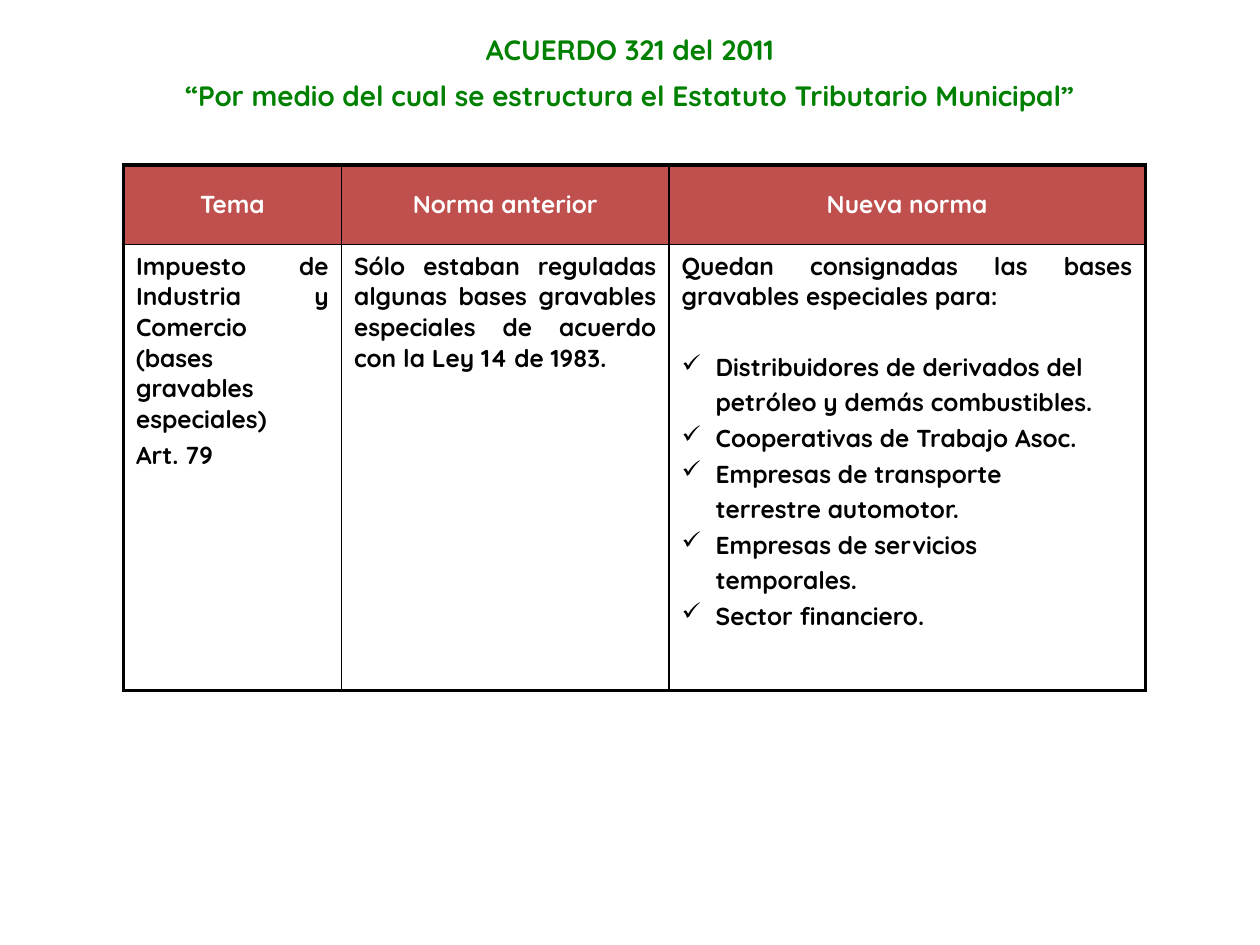
from lxml import etree
from pptx import Presentation
from pptx import util as u
from pptx.dml import color
from pptx.enum import text
from pptx.oxml import ns

FONT = "Quicksand"
COLORS = {"title": "008000", "header": "C0504D", "light": "FFFFFF", "dark": "000000"}
CENTER = text.PP_ALIGN.CENTER
LEFT = text.PP_ALIGN.LEFT
JUSTIFY = text.PP_ALIGN.JUSTIFY

TITLE = [
    "ACUERDO 321 del 2011",
    "“Por medio del cual se estructura el Estatuto Tributario Municipal”",
]
HEADERS = ["Tema", "Norma anterior", "Nueva norma"]
BODY = [
    ["Impuesto de Industria y Comercio (bases gravables especiales)", "Art. 79"],
    ["Sólo estaban reguladas algunas bases gravables especiales de acuerdo con la Ley 14 de 1983."],
    ["Quedan consignadas las bases gravables especiales para:"],
]
SECTORS = [
    "Distribuidores de derivados del\vpetróleo y demás combustibles.",
    "Cooperativas de Trabajo Asoc.",
    "Empresas de transporte\vterrestre automotor.",
    "Empresas de servicios\vtemporales.",
    "Sector financiero.",
]
COLUMN_WIDTHS = [1.73, 2.6, 3.78]
ROW_HEIGHTS = [0.63, 3.54]


def add_bullet(para, indent=0.27):
    properties = para._p.get_or_add_pPr()
    properties.set("marL", str(u.Inches(indent)))
    properties.set("indent", str(-u.Inches(indent)))
    bullet = etree.SubElement(properties, ns.qn("a:buChar"))
    bullet.set("char", "✓")


def write_paragraph(frame, words, first=False, size=14, ink="dark", align=JUSTIFY,
                    before=0, leading=None, bullet=False):
    para = frame.paragraphs[0] if first else frame.add_paragraph()
    para.text = words
    if bullet:
        add_bullet(para)
    para.alignment = align
    para.space_before = u.Pt(before)
    if leading:
        para.line_spacing = u.Pt(leading)
    for item in [para, *para.runs]:
        item.font.name = FONT
        item.font.size = u.Pt(size)
        item.font.bold = True
        item.font.color.rgb = color.RGBColor.from_string(COLORS[ink])


def set_borders(cell, widths):
    properties = cell._tc.get_or_add_tcPr()
    for index, (side, width) in enumerate(widths.items()):
        line = etree.Element(ns.qn(f"a:ln{side}"), w=str(u.Pt(width)))
        fill = etree.SubElement(line, ns.qn("a:solidFill"))
        etree.SubElement(fill, ns.qn("a:srgbClr"), val=COLORS["dark"])
        properties.insert(index, line)


def add_title(page):
    title = page.shapes.title
    title.left, title.top = u.Inches(0), u.Inches(0.21)
    title.width, title.height = u.Inches(10), u.Inches(0.77)
    frame = title.text_frame
    frame.auto_size = text.MSO_AUTO_SIZE.NONE
    frame.vertical_anchor = text.MSO_ANCHOR.TOP
    for index, words in enumerate(TITLE):
        write_paragraph(frame, words, first=index == 0, size=16, ink="title",
                        align=CENTER, before=7 * index)


def add_grid(page):
    rows, columns = len(ROW_HEIGHTS), len(COLUMN_WIDTHS)
    table = page.shapes.add_table(
        rows, columns, u.Inches(0.98), u.Inches(1.31),
        u.Inches(sum(COLUMN_WIDTHS)), u.Inches(sum(ROW_HEIGHTS))).table
    table.first_row = table.horz_banding = False
    for column, width in zip(table.columns, COLUMN_WIDTHS):
        column.width = u.Inches(width)
    for row, height in zip(table.rows, ROW_HEIGHTS):
        row.height = u.Inches(height)
    for r in range(rows):
        for c in range(columns):
            cell = table.cell(r, c)
            if r == 0:
                cell.fill.solid()
                cell.fill.fore_color.rgb = color.RGBColor.from_string(COLORS["header"])
            else:
                cell.fill.background()
            edges = {"L": c == 0, "R": c == columns - 1, "T": r == 0, "B": r == rows - 1}
            set_borders(cell, {side: 2.25 if outer else 1 for side, outer in edges.items()})
    return table


def fill_table(table):
    for column, (header, paragraphs) in enumerate(zip(HEADERS, BODY)):
        top = table.cell(0, column)
        top.vertical_anchor = text.MSO_ANCHOR.MIDDLE
        write_paragraph(top.text_frame, header, first=True, ink="light", align=CENTER)
        frame = table.cell(1, column).text_frame
        for index, words in enumerate(paragraphs):
            write_paragraph(frame, words, first=index == 0, before=2.8 * index)
    for index, sector in enumerate(SECTORS):
        write_paragraph(frame, sector, align=LEFT, leading=20.3, bullet=True,
                        before=20 if index == 0 else 0)


def main():
    deck = Presentation()
    deck.slide_width, deck.slide_height = u.Inches(10), u.Inches(7.5)
    page = deck.slides.add_slide(deck.slide_layouts[5])
    add_title(page)
    fill_table(add_grid(page))
    deck.save("out.pptx")


if __name__ == "__main__":
    main()
